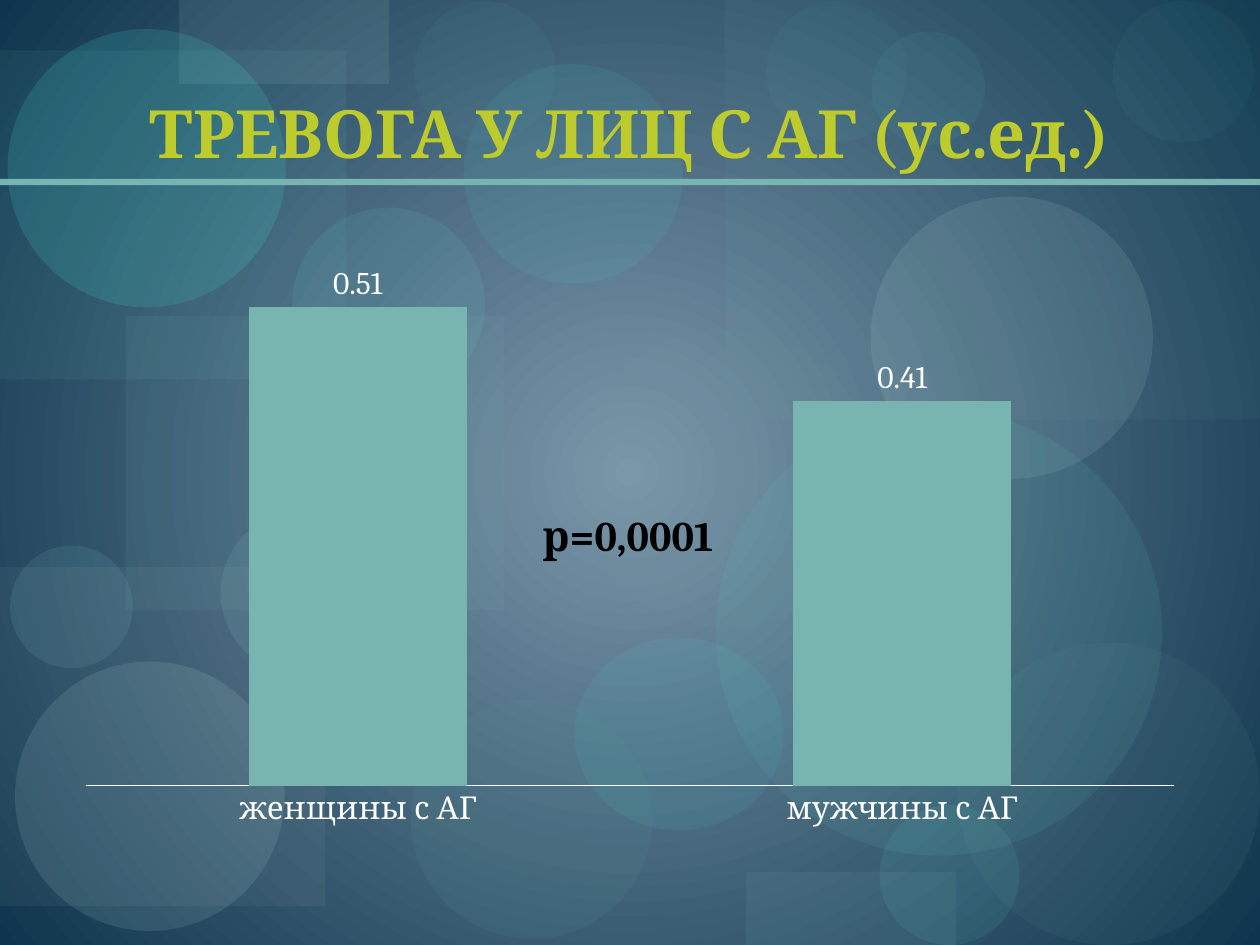
from lxml import etree
from pptx import Presentation
from pptx.chart.data import CategoryChartData
from pptx.dml.color import RGBColor
from pptx.enum.chart import XL_CHART_TYPE, XL_LABEL_POSITION, XL_TICK_MARK
from pptx.enum.shapes import MSO_SHAPE
from pptx.enum.text import MSO_ANCHOR, MSO_AUTO_SIZE, PP_ALIGN
from pptx.oxml.ns import qn
from pptx.util import Pt

RECT, OVAL = MSO_SHAPE.RECTANGLE, MSO_SHAPE.OVAL
COLUMN, ABOVE = XL_CHART_TYPE.COLUMN_CLUSTERED, XL_LABEL_POSITION.OUTSIDE_END
NOTICK = XL_TICK_MARK.NONE
BOTTOM, CENTER = MSO_ANCHOR.BOTTOM, PP_ALIGN.CENTER
GROW = MSO_AUTO_SIZE.SHAPE_TO_FIT_TEXT
FONT = "Cambria"
HEX = {
    "core": "7B96AA", "edge": "0E354D", "teal": "79B5B0", "white": "FFFFFF",
    "black": "000000", "deep": "549791", "gray": "B2B7BA", "moss": "70A39E",
    "aqua": "65E8DC", "pale": "C1E8E4", "vivid": "44EADC", "mint": "77D6CE",
    "mist": "BED7D4", "soft": "97DCD6", "sea": "61CDC4",
    "lemon": "ECF87B", "lime": "BECB2D", "olive": "B5C300",
}


def shade(fill, root, stops):
    """Give a fill gradient stops and return its XML element."""
    fill.gradient()
    grad = root.find(".//" + qn("a:gradFill"))
    band = grad.find(qn("a:gsLst"))
    for old in list(band):
        band.remove(old)
    for pos, name in stops:
        stop = etree.SubElement(band, qn("a:gs"), pos=str(pos * 1000))
        etree.SubElement(stop, qn("a:srgbClr"), val=HEX[name])
    return grad


def block(kind, box, name, alpha=100):
    """Draw a plain shape, alpha in percent."""
    shape = slide.shapes.add_shape(kind, *map(Pt, box))
    shape.shadow.inherit = False
    shape.line.fill.background()
    shape.fill.solid()
    shape.fill.fore_color.rgb = RGBColor.from_string(HEX[name])
    if alpha < 100:
        tint = shape.fill._xPr.find(".//" + qn("a:srgbClr"))
        etree.SubElement(tint, qn("a:alpha"), val=str(alpha * 1000))


deck = Presentation()
deck.slide_width, deck.slide_height = Pt(720), Pt(540)
slide = deck.slides.add_slide(deck.slide_layouts[6])

# Radial background
grad = shade(slide.background.fill, slide._element, [(0, "core"), (100, "edge")])
grad.remove(grad.find(qn("a:lin")))
path = etree.SubElement(grad, qn("a:path"))
path.set("path", "circle")
etree.SubElement(path, qn("a:fillToRect"), l="50000", t="50000", r="50000", b="50000")

# Translucent decoration, back to front
for kind, box, name, alpha in [
    (RECT, (72, 180.7, 216, 167.8), "teal", 9),
    (OVAL, (234.7, 399.6, 138.2, 136.8), "deep", 13),
    (RECT, (414, 0, 306, 239.8), "teal", 6),
    (RECT, (0, 324, 185.8, 193.7), "gray", 8),
    (OVAL, (329, 187.9, 171.4, 171.4), "moss", 8),
    (OVAL, (502.6, 460, 80, 80), "aqua", 9),
    (OVAL, (497.5, 112.3, 161.3, 161.3), "pale", 11),
    (OVAL, (8.6, 378, 154, 154), "pale", 12),
    (OVAL, (159, 360.7, 80.6, 80.6), "aqua", 9),
    (OVAL, (328.3, 364.3, 119.5, 110.2), "vivid", 8),
    (RECT, (0, 28.8, 198, 188), "mint", 7),
    (RECT, (102.2, 0, 120, 48), "mist", 10),
    (OVAL, (4.3, 16.6, 159, 159), "vivid", 15),
    (OVAL, (5.8, 311.8, 70, 70), "soft", 10),
    (OVAL, (167, 118.8, 110.2, 110.2), "aqua", 9),
    (OVAL, (265, 36.7, 125.3, 125.3), "vivid", 8),
    (OVAL, (409, 234, 255, 255), "sea", 10),
    (OVAL, (437.8, 0.7, 80.6, 80.6), "aqua", 4),
    (OVAL, (547.2, 367.2, 172.8, 172.8), "moss", 8),
    (OVAL, (126, 291.6, 94.3, 94.3), "soft", 10),
    (OVAL, (498.2, 18, 64.8, 64.8), "aqua", 6),
    (OVAL, (635.8, 0.7, 80.6, 80.6), "aqua", 4),
    (RECT, (426.2, 498.2, 120, 41.8), "teal", 10),
    (OVAL, (236.9, 0.7, 80.6, 80.6), "aqua", 4),
]:
    block(kind, box, name, alpha)

# Rule under the title
block(RECT, (0, 102.2, 720, 3.6), "teal")

# Title
frame = slide.shapes.add_textbox(Pt(36), Pt(12), Pt(648), Pt(90)).text_frame
frame.word_wrap = True
frame.vertical_anchor = BOTTOM
para = frame.paragraphs[0]
para.alignment = CENTER
run = para.add_run()
run.text = "ТРЕВОГА У ЛИЦ С АГ (ус.ед.)"
run.font.size, run.font.name, run.font.bold = Pt(38), FONT, True
grad = shade(run.font.fill, run._r, [(0, "lemon"), (75, "lime"), (100, "olive")])
grad.find(qn("a:lin")).set("ang", "5400000")

# Column chart
data = CategoryChartData()
data.categories = ["женщины с АГ", "мужчины с АГ"]
data.add_series("Series 1", [0.51, 0.41])
chart = slide.shapes.add_chart(COLUMN, Pt(36), Pt(120), Pt(648), Pt(360), data).chart
chart.has_legend = chart.has_title = False
chart.font.size, chart.font.name = Pt(18), FONT
chart.font.color.rgb = RGBColor.from_string(HEX["white"])
axis = chart.category_axis
axis.major_tick_mark = axis.minor_tick_mark = NOTICK
axis.format.line.color.rgb = RGBColor.from_string(HEX["white"])
scale = chart.value_axis
scale.visible = scale.has_major_gridlines = False
scale.minimum_scale, scale.maximum_scale = 0, 0.6
plot = chart.plots[0]
plot.gap_width = 150
plot.vary_by_categories = False
plot.has_data_labels = True
plot.data_labels.show_value = True
plot.data_labels.position = ABOVE
bars = plot.series[0].format.fill
bars.solid()
bars.fore_color.rgb = RGBColor.from_string(HEX["teal"])

# Significance note
frame = slide.shapes.add_textbox(Pt(303), Pt(287.5), Pt(114.5), Pt(36)).text_frame
frame.word_wrap = False
frame.auto_size = GROW
run = frame.paragraphs[0].add_run()
run.text = "р=0,0001"
run.font.size, run.font.name, run.font.bold = Pt(24), FONT, True
run.font.color.rgb = RGBColor.from_string(HEX["black"])

deck.save("out.pptx")
